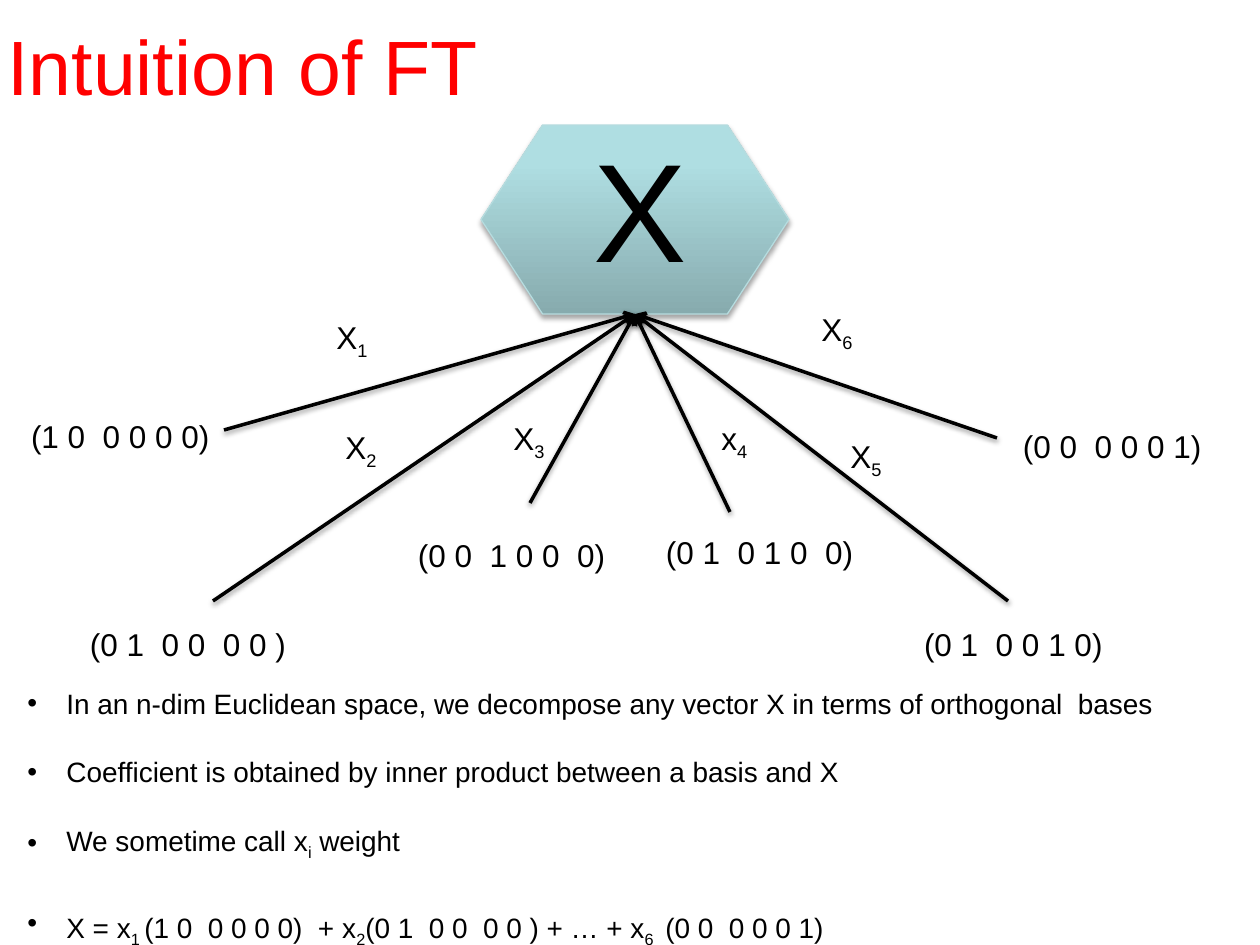
from copy import deepcopy

from lxml import etree
from pptx import Presentation
from pptx import util as u
from pptx.dml.color import RGBColor
from pptx.enum import shapes, text
from pptx.oxml import ns

SCALE = 914400 / 126
FONT = "Arial"
RED = RGBColor(0xFF, 0x00, 0x00)
BLACK = RGBColor(0x00, 0x00, 0x00)
DEEP = RGBColor(0x87, 0xAB, 0xAE)
PALE = RGBColor(0xAF, 0xDE, 0xE2)
LIGHT = RGBColor(0xAF, 0xE0, 0xE4)
EDGE = RGBColor(0xB6, 0xDC, 0xDF)


def px(*vals):
    return [u.Emu(round(v * SCALE)) for v in vals]


def node(root, tag, **attrs):
    return etree.SubElement(root, ns.qn(tag), {k: str(v) for k, v in attrs.items()})


class Board:
    """Draws styled elements on one slide, with lengths in px."""

    def __init__(self, deck):
        self.slide = deck.slides.add_slide(deck.slide_layouts[5])

    def style(self, font, size, color=BLACK):
        font.name, font.size = FONT, u.Pt(size)
        font.color.rgb = color

    def spell(self, para, mark, size, gap):
        for i, bit in enumerate(mark.split("~")):
            if not bit:
                continue
            run = para.add_run()
            run.text = bit
            self.style(run.font, gap if bit == " " else size)
            if i % 2:
                run._r.get_or_add_rPr().set("baseline", "-25000")

    def shade(self, shape, alpha, dist):
        props = shape._element.spPr
        for old in props.findall(ns.qn("a:effectLst")):
            props.remove(old)
        cast = node(node(props, "a:effectLst"), "a:outerShdw", blurRad=u.Pt(3.1),
                    dist=u.Pt(dist), dir=5400000, rotWithShape=0)
        tint = node(cast, "a:srgbClr", val=BLACK)
        node(tint, "a:alpha", val=alpha * 1000)

    def title(self, words, *area):
        shape = self.slide.shapes.title
        shape.left, shape.top, shape.width, shape.height = px(*area)
        frame = shape.text_frame
        frame.text = words
        frame.vertical_anchor = text.MSO_ANCHOR.MIDDLE
        para = frame.paragraphs[0]
        para.alignment = text.PP_ALIGN.LEFT
        self.style(para.runs[0].font, 44, RED)

    def hexagon(self, *area):
        shape = self.slide.shapes.add_shape(
            shapes.MSO_SHAPE.FLOWCHART_PREPARATION, *px(*area))
        fill = shape.fill
        fill.gradient()
        fill.gradient_angle = 90
        low, high = fill.gradient_stops
        low.position, low.color.rgb = 0, DEEP
        high.position, high.color.rgb = 1, LIGHT
        mid = deepcopy(high._gs)
        high._gs.addprevious(mid)
        stop = fill.gradient_stops[1]
        stop.position, stop.color.rgb = 0.8, PALE
        shape.line.color.rgb = EDGE
        shape.line.width = u.Pt(0.75)
        self.shade(shape, 35, 1.8)
        return shape

    def label(self, mark, left, top, width, height, size=18):
        box = self.slide.shapes.add_textbox(*px(left, top, width, height))
        frame = box.text_frame
        frame.word_wrap = False
        frame.auto_size = text.MSO_AUTO_SIZE.SHAPE_TO_FIT_TEXT
        self.spell(frame.paragraphs[0], mark, size, 28)

    def arrow(self, x, y, goal):
        line = self.slide.shapes.add_connector(
            shapes.MSO_CONNECTOR.STRAIGHT, *px(x, y, x, y))
        line.end_connect(goal, 2)
        line.line.color.rgb = BLACK
        line.line.width = u.Pt(2)
        node(line.line._get_or_add_ln(), "a:tailEnd", type="arrow")
        self.shade(line, 38, 1.6)

    def bullets(self, items, *area):
        frame = self.slide.shapes.add_textbox(*px(*area)).text_frame
        frame.word_wrap = True
        for i, mark in enumerate(items):
            para = frame.add_paragraph() if i else frame.paragraphs[0]
            props = para._p.get_or_add_pPr()
            props.set("marL", str(u.Inches(0.31)))
            props.set("indent", str(-u.Inches(0.31)))
            if i:
                para.space_before = u.Pt(20)
            node(props, "a:buFont", typeface=FONT)
            node(props, "a:buChar", char="•")
            self.spell(para, mark, 16, 24)


VECTORS = [
    ("(1 0  0 0 0 0)", 5, 393, 219),
    ("(0 1  0 0  0 0 )", 64, 601, 237),
    ("(0 0  1 0 0  0)", 392, 512, 228),
    ("(0 1  0 1 0  0)", 640, 509, 228),
    ("(0 1  0 0 1 0)", 898, 601, 219),
    ("(0 0  0 0 0 1)", 997, 403, 219),
]
WEIGHTS = [
    ("X~1", 324, 312, 58),
    ("X~2", 333, 422, 58),
    ("X~3", 501, 413, 58),
    ("x~4", 709, 413, 53),
    ("X~5", 838, 431, 58),
    ("X~6", 809, 304, 58),
]
STARTS = [(224, 430), (213, 601), (530, 503), (730, 512), (1008, 601), (997, 438)]
NOTES = [
    "In an n-dim Euclidean space, we decompose any vector X in terms of orthogonal  bases",
    "Coefficient is obtained by inner product between a basis and X",
    "We sometime call x~i~ weight",
    "X = x~1 ~(1 0  0 0 0 0)  + x~2~(0 1  0 0  0 0 ) + … + x~6~ ~~(0 0  0 0 0 1)",
]


def main():
    deck = Presentation()
    deck.slide_width, deck.slide_height = px(1260, 945)
    board = Board(deck)
    board.title("Intuition of FT", -5, -14, 1134, 158)
    core = board.hexagon(481, 125, 308, 189)
    for words, left, top, width in VECTORS:
        board.label(" ~~" + words, left, top, width, 72)
    board.label("X", 581, 116, 120, 183, 80)
    for x, y in STARTS:
        board.arrow(x, y, core)
    for mark, left, top, width in WEIGHTS:
        board.label(mark, left, top, width, 50)
    board.bullets(NOTES, 15, 680, 1166, 265)
    deck.save("out.pptx")


if __name__ == "__main__":
    main()
